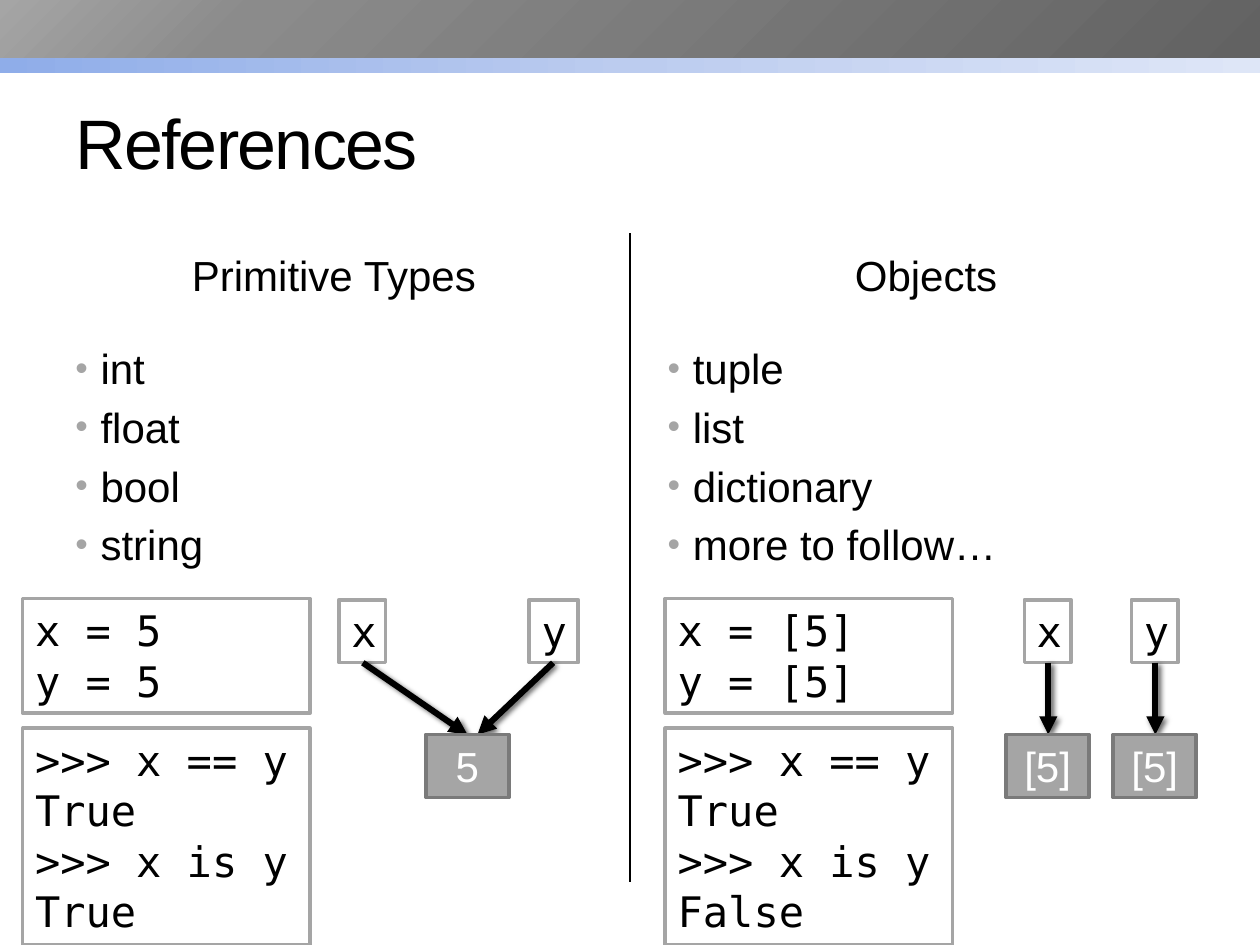
from dataclasses import dataclass

from lxml import etree
from pptx import Presentation, util as u
from pptx.dml import color
from pptx.enum import shapes, text
from pptx.oxml import ns, parse_xml


@dataclass(frozen=True)
class Theme:
    """Colours, fonts and sizes of the slide."""
    black: str = "000000"
    white: str = "FFFFFF"
    grey: str = "A5A5A5"
    dark: str = "7A7A7A"
    banner: tuple = ((0, "626262"), (80, "8B8B8B"), (100, "A5A5A5"))
    stripe: tuple = ((0, "8FADE9"), (50, "BCCCEF"), (100, "DEE6F7"))
    sans: str = "Arial"
    mono: str = "DejaVu Sans Mono"
    title: int = 40
    body: int = 24
    border: float = 2.08
    arrow: float = 3.5
    divider: float = 1.5


def rgb(value):
    """Turn a hex string into a colour."""
    return color.RGBColor.from_string(value)


def xml(tag, content="", attributes=""):
    """Build one DrawingML element."""
    return parse_xml(f"<a:{tag} {ns.nsdecls('a')} {attributes}>{content}</a:{tag}>")


class Canvas:
    """Draws styled elements on a grid of 100 columns by 75 rows."""

    def __init__(self, presentation, theme):
        """Add a blank slide and derive the grid from its size."""
        self.theme = theme
        self.slide = presentation.slides.add_slide(presentation.slide_layouts[6])
        self.target = self.slide.shapes
        self.column = presentation.slide_width / 100
        self.row = presentation.slide_height / 75

    def place(self, *cells):
        """Convert alternating columns and rows to lengths."""
        return [round(cell * (self.row if i % 2 else self.column)) for i, cell in enumerate(cells)]

    def group(self):
        """Send the following elements to a new group."""
        self.target = self.slide.shapes.add_group_shape().shapes

    def fill_text(self, shape, lines, font, size, ink, align=None, anchor=text.MSO_ANCHOR.TOP):
        """Fill a shape with formatted lines and return its paragraphs."""
        frame = shape.text_frame
        frame.text = "\n".join(lines)
        frame.word_wrap = True
        frame.vertical_anchor = anchor
        for paragraph in frame.paragraphs:
            paragraph.alignment = align or text.PP_ALIGN.LEFT
            for run in paragraph.runs:
                run.font.name, run.font.size = font, u.Pt(size)
                run.font.color.rgb = rgb(ink)
        return frame.paragraphs

    def band(self, cells, stops, angle):
        """Draw a gradient band with a clockwise angle."""
        shape = self.target.add_shape(shapes.MSO_SHAPE.RECTANGLE, *self.place(*cells))
        shape.shadow.inherit = False
        shape.line.fill.background()
        shape.fill.gradient()
        shape.fill.gradient_angle = (360 - angle) % 360
        stop_list = shape.element.spPr.find(".//" + ns.qn("a:gsLst"))
        for stop in list(stop_list):
            stop_list.remove(stop)
        for position, value in stops:
            stop_list.append(xml("gs", f'<a:srgbClr val="{value}"/>', f'pos="{position * 1000}"'))

    def title(self, cells, words):
        """Draw the slide title with tightened letters."""
        box = self.target.add_textbox(*self.place(*cells))
        paragraphs = self.fill_text(box, [words], self.theme.sans, self.theme.title,
                                    self.theme.black, anchor=text.MSO_ANCHOR.MIDDLE)
        paragraphs[0].runs[0].font._element.set("spc", "-100")

    def body(self, cells, lines, heading=False):
        """Draw a centred heading or a bulleted list."""
        box = self.target.add_textbox(*self.place(*cells))
        align = text.PP_ALIGN.CENTER if heading else text.PP_ALIGN.LEFT
        anchor = text.MSO_ANCHOR.MIDDLE if heading else text.MSO_ANCHOR.TOP
        for paragraph in self.fill_text(box, lines, self.theme.sans, self.theme.body,
                                        self.theme.black, align, anchor):
            properties = paragraph._p.get_or_add_pPr()
            properties.append(xml("spcBef", '<a:spcPct val="20000"/>'))
            if not heading:
                indent = round(2 * self.column)
                properties.set("marL", str(indent))
                properties.set("indent", str(-indent))
                properties.append(xml("buClr", f'<a:srgbClr val="{self.theme.grey}"/>'))
                properties.append(xml("buSzPct", attributes='val="85000"'))
                properties.append(xml("buFont", attributes=f'typeface="{self.theme.sans}"'))
                properties.append(xml("buChar", attributes='char="•"'))

    def box(self, cells, lines, value=False):
        """Draw a white code box or a grey value box."""
        theme = self.theme
        shape = self.target.add_shape(shapes.MSO_SHAPE.RECTANGLE, *self.place(*cells))
        shape.shadow.inherit = False
        shape.fill.solid()
        shape.fill.fore_color.rgb = rgb(theme.grey if value else theme.white)
        shape.line.color.rgb = rgb(theme.dark if value else theme.grey)
        shape.line.width = u.Pt(theme.border)
        if value:
            self.fill_text(shape, lines, theme.sans, theme.body, theme.white, text.PP_ALIGN.CENTER)
        else:
            self.fill_text(shape, lines, theme.mono, theme.body, theme.black)

    def line(self, cells, width, arrow=False):
        """Draw a plain line or a shadowed arrow."""
        connector = self.target.add_connector(shapes.MSO_CONNECTOR.STRAIGHT, *self.place(*cells))
        connector.line.color.rgb = rgb(self.theme.black)
        connector.line.width = u.Pt(width)
        properties = connector.element.spPr
        effects = etree.SubElement(properties, ns.qn("a:effectLst"))
        if arrow:
            properties.find(ns.qn("a:ln")).append(xml("tailEnd", attributes='type="triangle"'))
            effects.append(xml(
                "outerShdw",
                f'<a:srgbClr val="{self.theme.black}"><a:alpha val="60000"/></a:srgbClr>',
                f'blurRad="{u.Pt(3)}" dist="{u.Pt(2)}" dir="2700000"'))

    def variable(self, left, name, width=3.7):
        """Draw the box of a variable name."""
        self.box((left, 47.6, width, 5), [name])

    def value(self, left, label):
        """Draw the box of a stored value."""
        self.box((left, 58.3, 6.6, 5), [label], value=True)

    def reference(self, start, end):
        """Draw an arrow from a variable to its value."""
        self.line((start, 52.6, end, 58.3), self.theme.arrow, arrow=True)


def main():
    """Build the slide and save it."""
    presentation = Presentation()
    presentation.slide_width, presentation.slide_height = u.Inches(10), u.Inches(7.5)
    theme = Theme()
    canvas = Canvas(presentation, theme)
    canvas.band((0, 2.4, 100, 3.4), theme.stripe, 0)
    canvas.band((0, 0, 100, 4.6), theme.banner, 225)
    canvas.line((50, 18.5, 50, 70), theme.divider)
    canvas.title((5, 5.8, 90, 10.8), "References")

    halves = (
        (5, 1.8, "Primitive Types", ("int", "float", "bool", "string"), "5", "True"),
        (52, 52.8, "Objects", ("tuple", "list", "dictionary", "more to follow…"), "[5]", "False"),
    )
    for left, code_left, heading, kinds, literal, identity in halves:
        canvas.body((left, 18.3, 43, 7), [heading], heading=True)
        canvas.body((left, 26.7, 43, 43.2), kinds)
        canvas.box((code_left, 47.5, 22.8, 9.1), [f"x = {literal}", f"y = {literal}"])
        canvas.box((code_left, 57.8, 22.8, 17.2), [">>> x == y", "True", ">>> x is y", identity])

    canvas.group()
    canvas.variable(26.9, "x")
    canvas.reference(28.8, 37.1)
    canvas.variable(42, "y", width=3.9)
    canvas.reference(43.9, 37.9)
    canvas.value(33.8, "5")

    canvas.group()
    for name, left in (("x", 81.3), ("y", 89.8)):
        canvas.variable(left, name)
        canvas.reference(left + 1.9, left + 1.9)
        canvas.value(left - 1.45, "[5]")
    presentation.save("out.pptx")


if __name__ == "__main__":
    main()
